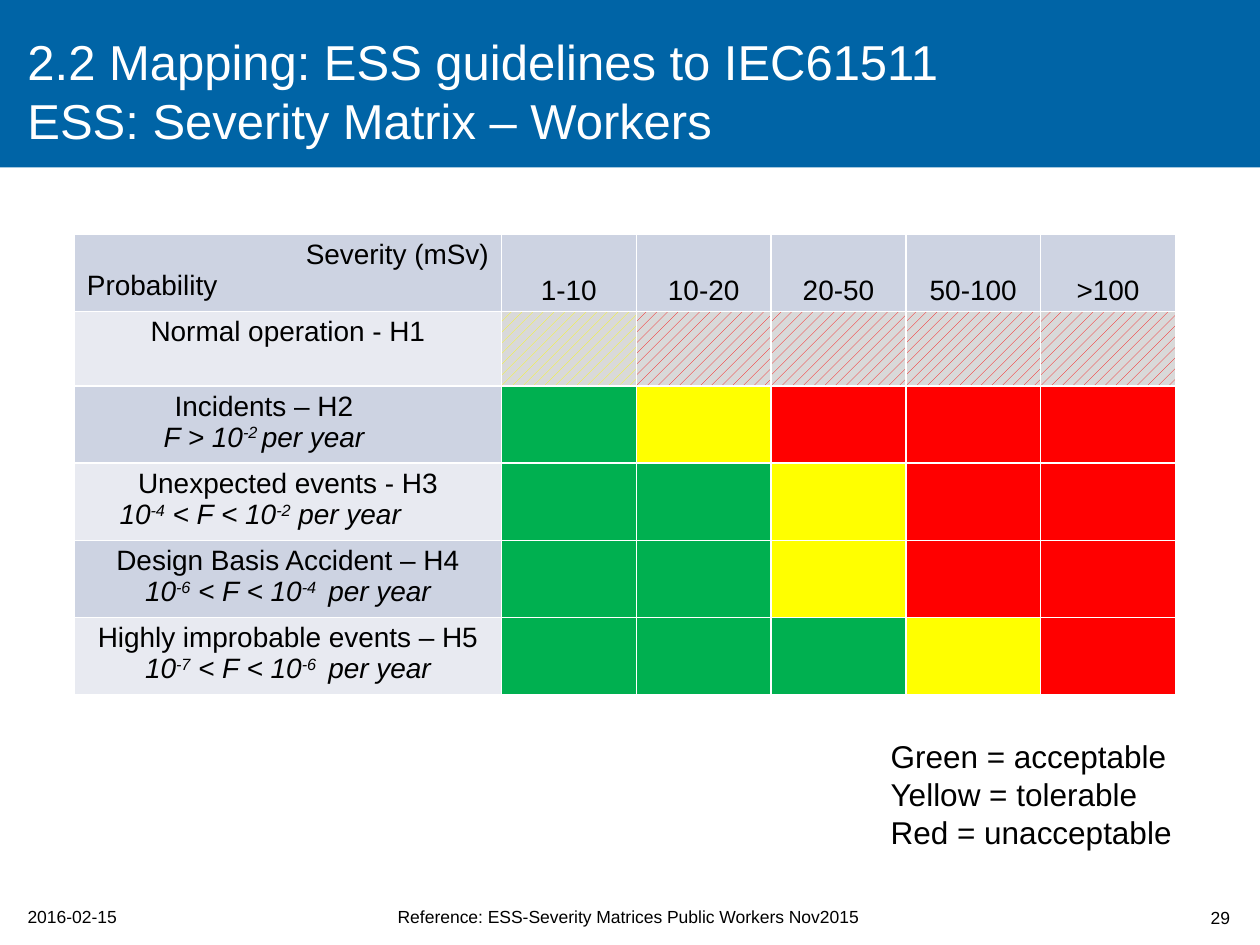
from lxml.etree import SubElement
from pptx import Presentation
from pptx.dml.color import RGBColor
from pptx.enum.dml import MSO_PATTERN
from pptx.enum.shapes import MSO_SHAPE
from pptx.enum.text import MSO_ANCHOR as Anchor, PP_ALIGN as Align
from pptx.oxml.ns import qn
from pptx.util import Inches, Pt

WHITE = RGBColor(0xFF, 0xFF, 0xFF)
BLACK = RGBColor(0x00, 0x00, 0x00)
BLUE = RGBColor(0x00, 0x64, 0xA6)
DARK_BAND = RGBColor(0xCD, 0xD3, 0xE2)
LIGHT_BAND = RGBColor(0xE8, 0xEA, 0xF1)
GREY = RGBColor(0xD9, 0xD9, 0xD9)
RISK = {
    "G": RGBColor(0x00, 0xB0, 0x50),
    "Y": RGBColor(0xFF, 0xFF, 0x00),
    "R": RGBColor(0xFF, 0x00, 0x00),
}


def write(paragraph, text, size=16, color=BLACK, align=Align.LEFT, italic=False, right=0):
    paragraph.alignment = align
    if right:
        paragraph._p.get_or_add_pPr().set("marR", str(Inches(right)))
    for index, part in enumerate(text.split("^")):
        run = paragraph.add_run()
        run.text = part
        run.font.name = "Arial"
        run.font.size = Pt(size)
        run.font.color.rgb = color
        run.font.italic = italic
        if index % 2:
            run.font._element.set("baseline", "30000")


deck = Presentation()
deck.slide_width, deck.slide_height = Inches(10), Inches(7.5)
slide = deck.slides.add_slide(deck.slide_layouts[6])

banner = slide.shapes.add_shape(MSO_SHAPE.RECTANGLE, 0, 0, deck.slide_width, Inches(1.33))
banner.shadow.inherit = False
banner.fill.solid()
banner.fill.fore_color.rgb = BLUE
banner.line.fill.background()

title = ["2.2 Mapping: ESS guidelines to IEC61511", "ESS: Severity Matrix – Workers"]
legend = ["Green = acceptable", "Yellow = tolerable", "Red = unacceptable"]
reference = ["Reference: ESS-Severity Matrices Public Workers Nov2015"]
texts = [
    (title, (0.12, 0.21, 7.56, 1.02), 28, WHITE, Align.LEFT, Anchor.MIDDLE),
    (legend, (6.97, 5.8, 2.68, 1.01), 18, BLACK, Align.LEFT, Anchor.TOP),
    (["2016-02-15"], (0.12, 7.14, 1.65, 0.27), 10, BLACK, Align.LEFT, Anchor.TOP),
    (reference, (2.65, 7.14, 4.67, 0.27), 10, BLACK, Align.CENTER, Anchor.TOP),
    (["29"], (9.14, 7.08, 0.72, 0.4), 10, BLACK, Align.RIGHT, Anchor.MIDDLE),
]
for lines, place, size, color, align, anchor in texts:
    frame = slide.shapes.add_textbox(*map(Inches, place)).text_frame
    frame.word_wrap = True
    frame.vertical_anchor = anchor
    for index, line in enumerate(lines):
        paragraph = frame.add_paragraph() if index else frame.paragraphs[0]
        write(paragraph, line, size=size, color=color, align=align)

severities = ["1-10", "10-20", "20-50", "50-100", ">100"]
events = [
    ("Normal operation - H1", 0, "", 0, "YRRRR"),
    ("Incidents – H2", 0.38, "F > 10^-2 ^per year", 0, "GYRRR"),
    ("Unexpected events - H3", 0, "10^-4^ < F < 10^-2^ per year", 0.44, "GGYRR"),
    ("Design Basis Accident – H4", 0, "10^-6^ < F < 10^-4 ^ per year", 0, "GGYRR"),
    ("Highly improbable events – H5", 0, "10^-7^ < F < 10^-6 ^ per year", 0, "GGGYR"),
]
ROW_HEIGHT = Inches(0.59)
matrix = slide.shapes.add_table(
    len(events) + 1, len(severities) + 1,
    Inches(0.59), Inches(1.86), Inches(8.74), ROW_HEIGHT * 6).table
matrix.first_row = matrix.horz_banding = False
for index, column in enumerate(matrix.columns):
    column.width = Inches(1.07 if index else 3.39)
for row in matrix.rows:
    row.height = ROW_HEIGHT

for cell in matrix.iter_cells():
    cell.margin_top = cell.margin_bottom = Inches(0.04)
    for side in ("a:lnL", "a:lnR", "a:lnT", "a:lnB"):
        border = SubElement(cell._tc.get_or_add_tcPr(), qn(side), w=str(Pt(1)))
        SubElement(SubElement(border, qn("a:solidFill")), qn("a:srgbClr"), val=str(WHITE))
    cell.fill.solid()
    cell.fill.fore_color.rgb = DARK_BAND

corner = matrix.cell(0, 0).text_frame
write(corner.paragraphs[0], "Severity (mSv)", align=Align.RIGHT)
write(corner.add_paragraph(), "Probability")
for column, severity in enumerate(severities, 1):
    header = matrix.cell(0, column)
    header.vertical_anchor = Anchor.BOTTOM
    write(header.text_frame.paragraphs[0], severity, align=Align.CENTER)

for row, (event, event_gap, frequency, frequency_gap, risks) in enumerate(events, 1):
    label = matrix.cell(row, 0)
    label.fill.fore_color.rgb = LIGHT_BAND if row % 2 else DARK_BAND
    write(label.text_frame.paragraphs[0], event, align=Align.CENTER, right=event_gap)
    if frequency:
        write(label.text_frame.add_paragraph(), frequency,
              align=Align.CENTER, italic=True, right=frequency_gap)
    for column, risk in enumerate(risks, 1):
        fill = matrix.cell(row, column).fill
        if row == 1:
            fill.patterned()
            fill.pattern = MSO_PATTERN.PERCENT_20
            fill.back_color.rgb = GREY
        fill.fore_color.rgb = RISK[risk]

deck.save("out.pptx")
